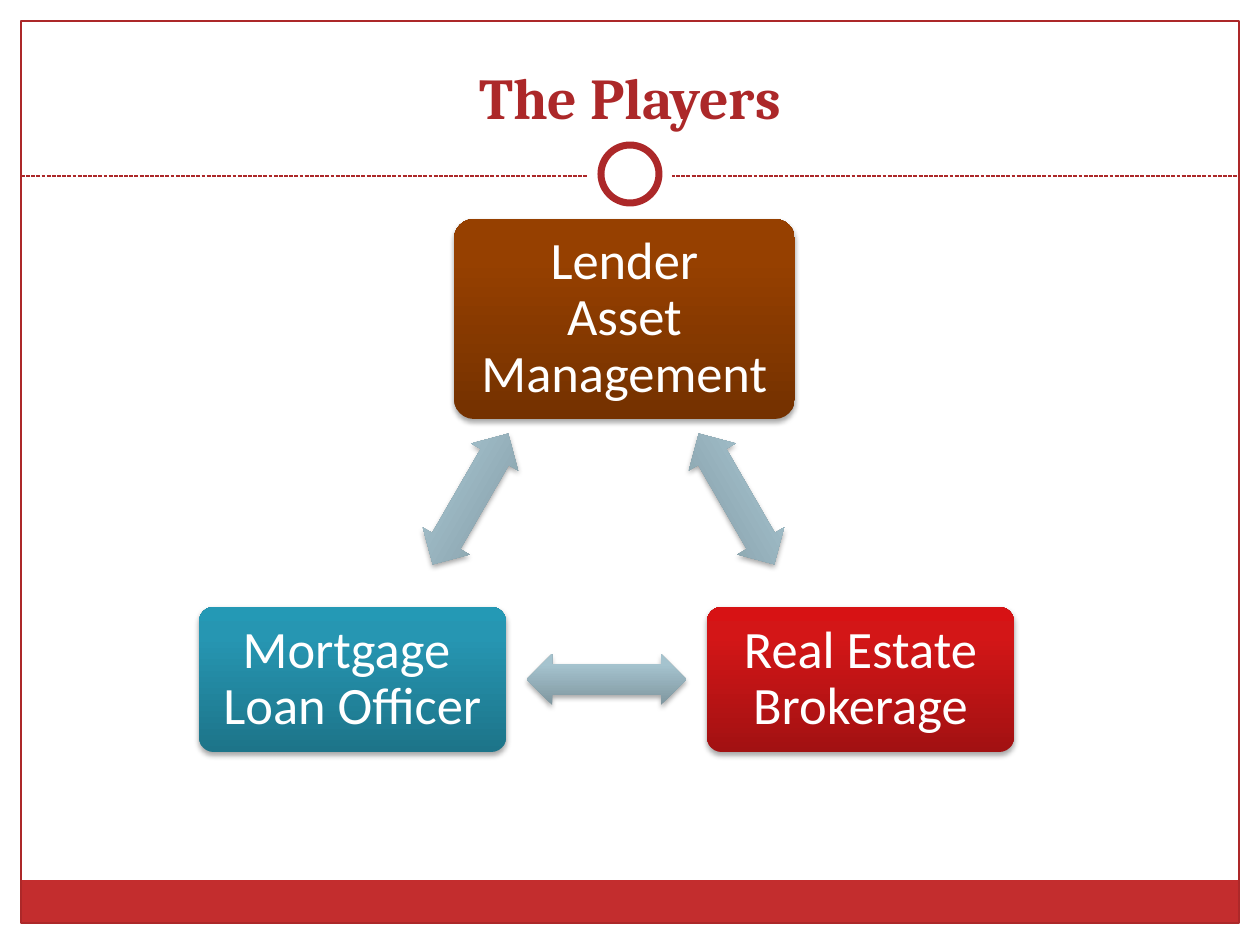
import copy

import lxml.etree
import pptx
import pptx.dml.color
import pptx.enum.dml
import pptx.enum.shapes
import pptx.enum.text
import pptx.oxml
import pptx.oxml.ns
import pptx.util

EMU_PER_PX = 914400 / 126
SHAPE = pptx.enum.shapes.MSO_SHAPE
COLOURS = {"white": "FFFFFF", "accent": "AC2829", "footer": "C32D2E"}
# Gradient stops from the bottom of a shape to its top
GRADIENTS = {
    "brown": ("743100", "964000", "974100"),
    "red": ("A21112", "D31617", "D71214"),
    "teal": ("1D7489", "2696B2", "2499B5"),
    "steel": ("7F969F", "A5C3CE", "A5C4D0"),
}
STOPS = (0, 0.8, 1)
SHADOW = (
    '<a:outerShdw xmlns:a="http://schemas.openxmlformats.org/drawingml/2006/main" '
    'blurRad="39000" dist="23000" dir="5400000" rotWithShape="0">'
    '<a:srgbClr val="000000"><a:alpha val="35000"/></a:srgbClr></a:outerShdw>'
)


def px(length):
    return pptx.util.Emu(round(length * EMU_PER_PX))


def rgb(name):
    return pptx.dml.color.RGBColor.from_string(COLOURS[name])


def add_plain(page, kind, box, fill=None, line=None, width=0.75):
    shape = page.shapes.add_shape(kind, *map(px, box))
    shape.shadow.inherit = False
    if fill:
        shape.fill.solid()
        shape.fill.fore_color.rgb = rgb(fill)
    else:
        shape.fill.background()
    if line:
        shape.line.color.rgb = rgb(line)
        shape.line.width = pptx.util.Pt(width)
    else:
        shape.line.fill.background()
    return shape


def add_glossy(page, kind, box, gradient):
    """Add a shape with a three-stop vertical gradient and a soft shadow."""
    shape = add_plain(page, kind, box)
    shape.fill.gradient()
    shape.fill.gradient_angle = 90
    properties = shape._element.spPr
    first = properties.find(".//" + pptx.oxml.ns.qn("a:gs"))
    first.addnext(copy.deepcopy(first))
    for stop, position, colour in zip(
            shape.fill.gradient_stops, STOPS, GRADIENTS[gradient]):
        stop.position = position
        stop.color.rgb = pptx.dml.color.RGBColor.from_string(colour)
    effects = properties.find(pptx.oxml.ns.qn("a:effectLst"))
    effects.append(pptx.oxml.parse_xml(SHADOW))
    return shape


def add_frame(page, box):
    """Draw the border, footer band, dashed rule and ring."""
    left, top, width, height = box
    footer = 43
    add_plain(page, SHAPE.RECTANGLE,
              (left, top + height - footer, width, footer), "footer")
    add_plain(page, SHAPE.RECTANGLE, box, line="accent")

    # Dashed rule below the title
    rule_y = px(top + 155)
    rule = page.shapes.add_connector(
        pptx.enum.shapes.MSO_CONNECTOR.STRAIGHT,
        px(left), rule_y, px(left + width), rule_y)
    rule.line.color.rgb = rgb("accent")
    rule.line.width = pptx.util.Pt(0.75)
    rule.line.dash_style = pptx.enum.dml.MSO_LINE.SQUARE_DOT
    lxml.etree.SubElement(rule._element.spPr, pptx.oxml.ns.qn("a:effectLst"))

    # White gap and ring, centred on the frame
    middle_x, middle_y = left + width / 2, top + 153
    for size, line in ((84, None), (58, "accent")):
        add_plain(page, SHAPE.OVAL,
                  (middle_x - size / 2, middle_y - size / 2, size, size),
                  "white", line, 4)


def add_title(page, box, text):
    title = page.shapes.title
    title.left, title.top, title.width, title.height = map(px, box)
    frame = title.text_frame
    frame.text = text
    frame.vertical_anchor = pptx.enum.text.MSO_ANCHOR.BOTTOM
    para = frame.paragraphs[0]
    para.alignment = pptx.enum.text.PP_ALIGN.CENTER
    para.font.name = "Cambria"
    para.font.size = pptx.util.Pt(33)
    para.font.bold = True
    para.font.color.rgb = rgb("accent")


def add_player(page, box, text, gradient):
    player = add_glossy(page, SHAPE.ROUNDED_RECTANGLE, box, gradient)
    player.adjustments[0] = 0.1
    frame = player.text_frame
    frame.word_wrap = True
    frame.vertical_anchor = pptx.enum.text.MSO_ANCHOR.MIDDLE
    frame.margin_left = frame.margin_right = px(20)
    frame.margin_top = frame.margin_bottom = px(20)
    para = frame.paragraphs[0]
    para.text = text
    para.alignment = pptx.enum.text.PP_ALIGN.CENTER
    para.line_spacing = 0.9
    para.font.name = "Calibri"
    para.font.size = pptx.util.Pt(30)
    para.font.color.rgb = rgb("white")


def add_arrow(page, centre, size, rotation):
    (x, y), (width, height) = centre, size
    arrow = add_glossy(page, SHAPE.LEFT_RIGHT_ARROW,
                       (x - width / 2, y - height / 2, width, height), "steel")
    arrow.adjustments[0] = 0.6
    arrow.adjustments[1] = 0.5
    arrow.rotation = rotation


def add_triangle(page, box):
    """Place three players at the corners and an arrow along each side."""
    left, top, width, height = box
    low_width, low_height = 307, 145
    low_top = top + height - low_height
    add_player(page, (left + 255, top, 341, 200),
               "Lender\vAsset Management", "brown")
    add_player(page, (left + width - low_width, low_top, low_width, low_height),
               "Real Estate Brokerage", "red")
    add_player(page, (left, low_top, low_width, low_height),
               "Mortgage \vLoan Officer", "teal")

    middle_x = left + width / 2
    add_arrow(page, (middle_x, low_top + low_height / 2), (160, 51), 0)
    for offset, rotation in ((-136, 300), (130, 60)):
        add_arrow(page, (middle_x + offset, top + 280), (151, 54), rotation)


def main():
    deck = pptx.Presentation()
    deck.slide_width, deck.slide_height = px(1260), px(945)
    page = deck.slides.add_slide(deck.slide_layouts[5])
    add_frame(page, (21, 21, 1218, 902))
    add_title(page, (42, 32, 1176, 105), "The Players")
    add_triangle(page, (199, 219, 815, 533))
    deck.save("out.pptx")


if __name__ == "__main__":
    main()
